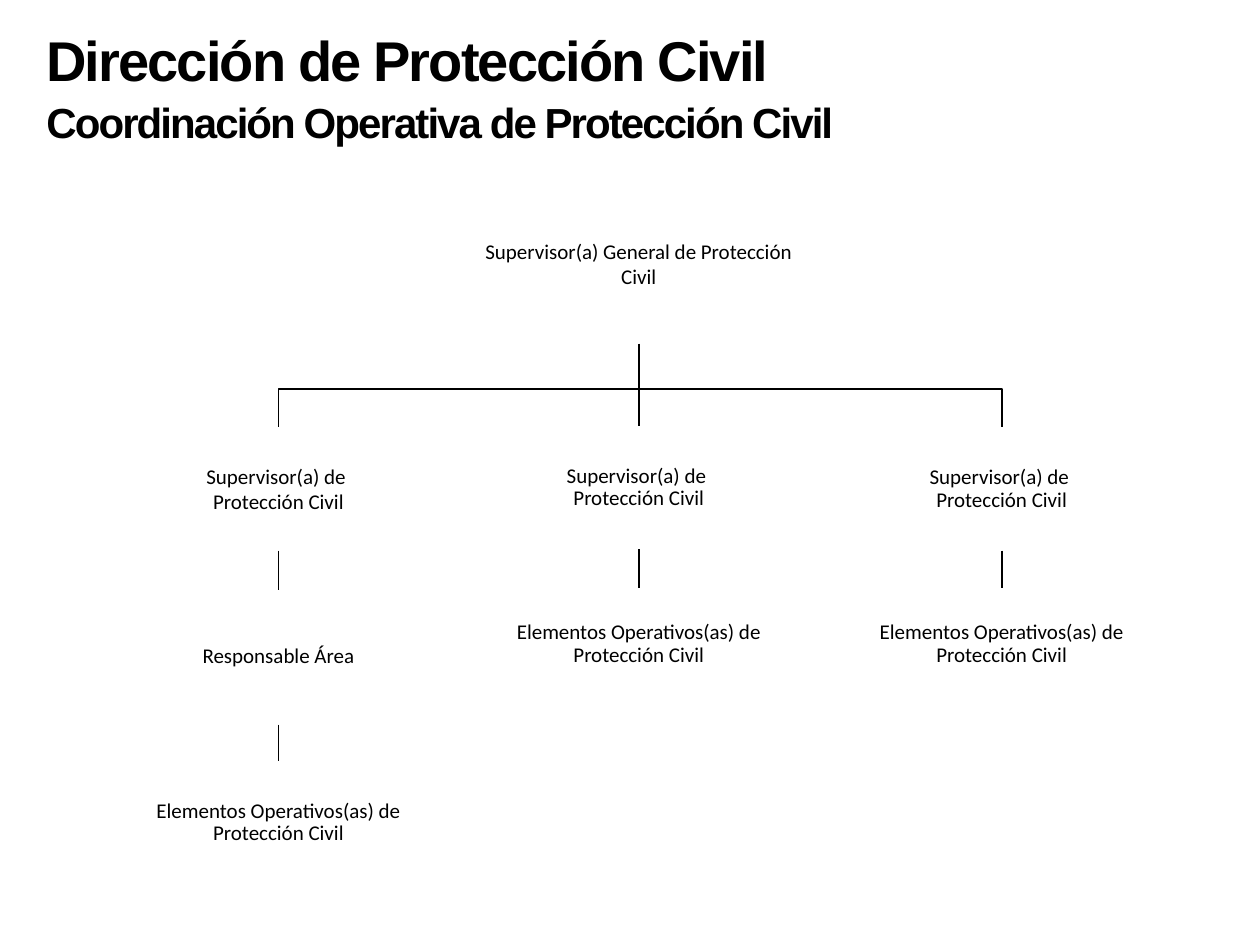
"""Build the organisation chart of the civil protection coordination."""
from pptx import Presentation
from pptx.dml.color import RGBColor
from pptx.enum.shapes import MSO_CONNECTOR as LINK, MSO_SHAPE as SHAPE
from pptx.enum.text import MSO_ANCHOR as ANCHOR, PP_ALIGN as ALIGN
from pptx.oxml.ns import qn
from pptx.util import Inches, Pt
from lxml import etree


def color(value):
    return RGBColor.from_string(value)


def style_line(line):
    line.color.rgb = color("000000")
    line.width = Pt(1)


deck = Presentation()
deck.slide_width, deck.slide_height = Inches(10), Inches(7.5)
page = deck.slides.add_slide(deck.slide_layouts[6])

SUPERVISOR = "Supervisor(a) de \vProtección Civil"
OPERATIVES = "Elementos Operativos(as) de Protección Civil"
LEFT, MIDDLE, RIGHT = 2.21, 5.07, 7.95
WIDTH = 2.28
INSET, RAISED = 0.01, 0.19

positions = [
    ("general", "Supervisor(a) General de Protección Civil", MIDDLE, 1.45, 2.74, 1.28, 1, INSET),
    ("left", SUPERVISOR, LEFT, 3.39, WIDTH, 0.98, 1, INSET),
    ("middle", SUPERVISOR, MIDDLE, 3.38, WIDTH, 0.98, 0.9, INSET),
    ("right", SUPERVISOR, RIGHT, 3.39, WIDTH, 0.98, 0.9, INSET),
    ("area", "Responsable Área", LEFT, 4.68, WIDTH, 1.07, 0.9, INSET),
    ("left team", OPERATIVES, LEFT, 6.04, WIDTH, 1.16, 0.9, RAISED),
    ("middle team", OPERATIVES, MIDDLE, 4.67, WIDTH, 1.07, 0.9, RAISED),
    ("right team", OPERATIVES, RIGHT, 4.67, WIDTH, 1.07, 0.9, RAISED),
]

boxes = {}
for name, text, center, top, width, height, spacing, bottom in positions:
    box = page.shapes.add_shape(
        SHAPE.RECTANGLE, Inches(center - width / 2), Inches(top), Inches(width), Inches(height))
    box.shadow.inherit = False
    box.fill.solid()
    box.fill.fore_color.rgb = color("FFFFFF")
    box.line.fill.background()
    frame = box.text_frame
    frame.word_wrap = True
    frame.vertical_anchor = ANCHOR.MIDDLE
    frame.margin_left = frame.margin_right = frame.margin_top = Inches(INSET)
    frame.margin_bottom = Inches(bottom)
    frame.text = text
    para = frame.paragraphs[0]
    para.alignment = ALIGN.CENTER
    para.line_spacing = spacing
    para.font.name = "Calibri"
    para.font.size = Pt(12)
    para.font.color.rgb = color("000000")
    boxes[name] = box

links = [
    ("general", "middle"), ("left", "area"), ("area", "left team"),
    ("middle", "middle team"), ("right", "right team"),
]
for upper, lower in links:
    link = page.shapes.add_connector(LINK.STRAIGHT, 0, 0, 0, 0)
    link.begin_connect(boxes[upper], 2)
    link.end_connect(boxes[lower], 0)
    style_line(link.line)
    etree.SubElement(link._element.spPr, qn("a:effectLst"))

for center in (LEFT, RIGHT):
    builder = page.shapes.build_freeform(Inches(MIDDLE), Inches(2.73))
    corners = [(MIDDLE, 3.09), (center, 3.09), (center, 3.39)]
    builder.add_line_segments([(Inches(x), Inches(y)) for x, y in corners], close=False)
    branch = builder.convert_to_shape()
    branch.shadow.inherit = False
    branch.fill.background()
    style_line(branch.line)

heading = page.shapes.add_textbox(Inches(0.27), Inches(0.12), Inches(7.96), Inches(1.04))
frame = heading.text_frame
frame.word_wrap = True
titles = [
    (frame.paragraphs[0], "Dirección de Protección Civil", 32),
    (frame.add_paragraph(), "Coordinación Operativa de Protección Civil", 24),
]
for para, text, size in titles:
    span = para.add_run()
    span.text = text
    span._r.get_or_add_rPr().set("spc", "-110")
    para.line_spacing = 1.07
    para.font.name = "Arial"
    para.font.size = Pt(size)
    para.font.bold = True
    para.font.color.rgb = color("000000")

deck.save("out.pptx")
